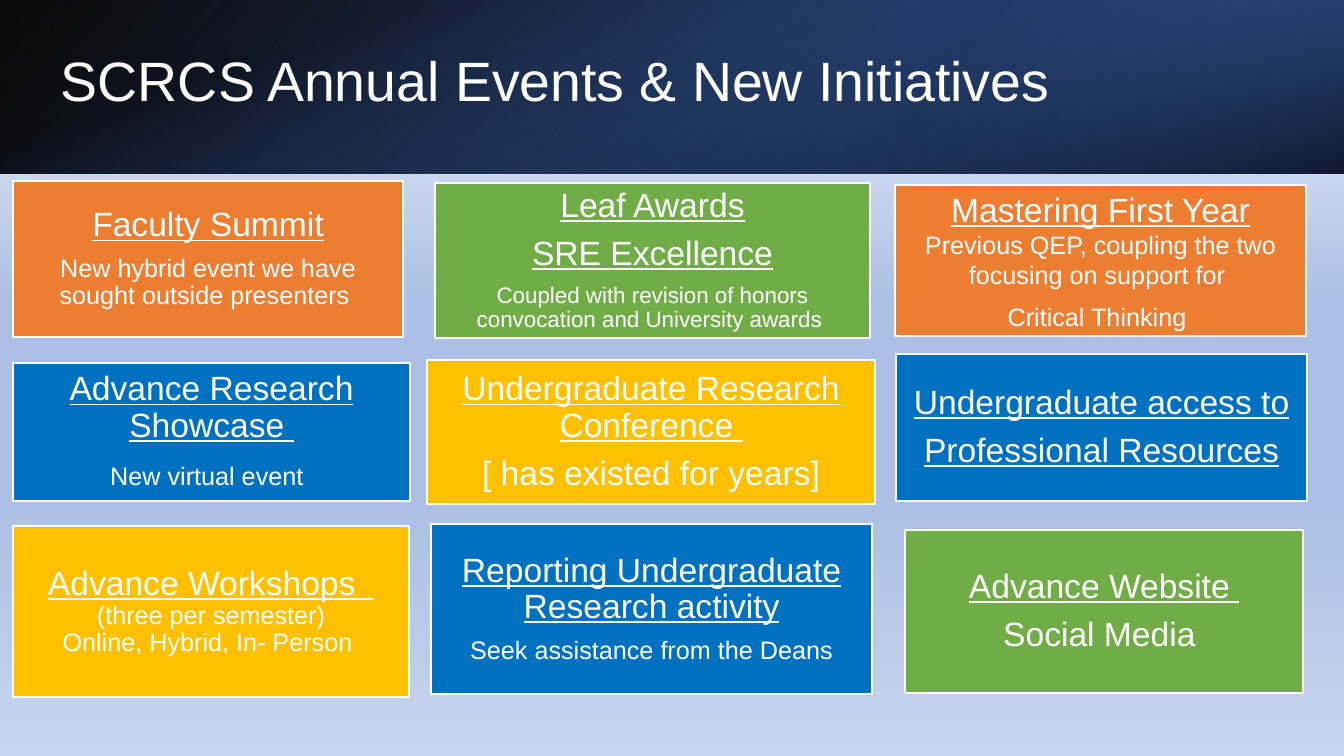
"""Builds the SCRCS annual events and new initiatives slide."""
from lxml import etree
from pptx import Presentation
from pptx.dml.color import RGBColor
from pptx.enum.shapes import MSO_SHAPE
from pptx.enum.text import MSO_ANCHOR, MSO_AUTO_SIZE, PP_ALIGN
from pptx.oxml.ns import qn
from pptx.util import Emu, Pt

RECTANGLE = MSO_SHAPE.RECTANGLE
MIDDLE = MSO_ANCHOR.MIDDLE
NO_AUTOFIT = MSO_AUTO_SIZE.NONE
LEFT, CENTER = PP_ALIGN.LEFT, PP_ALIGN.CENTER

EMU_PER_PX = 914400 / 100.8
SLIDE_W, SLIDE_H = 1344, 756
FONT = "Arial"
HEAD, BODY, SMALL = 24, 18, 16
INSET = 10
COLORS = {
    "white": "FFFFFF", "black": "000000", "orange": "ED7D31", "green": "70AD47",
    "gold": "FFC000", "blue": "0070C0", "accent": "4472C4", "navy": "203864",
    "steel": "2F5597", "mist": "F6F8FC", "sky": "ABC0E4", "haze": "C7D5ED",
}

TITLE = "SCRCS Annual Events & New Initiatives"
TITLE_BOX = (51, 42, 1293, 83)
BACKDROP = [(0, "mist", 100), (40, "sky", 100), (66, "sky", 100), (100, "haze", 100)]

# box, rotation, mirrored, gradient angle, stops of (position, color, opacity)
BAND = [
    ((0, 0, 1344, 174), 0, True, 140, [(0, "black", 96), (100, "steel", 100)]),
    ((896, 0, 448, 174), 180, True, 320, [(19, "navy", 68), (100, "accent", 79)]),
    ((585, -585, 174, 1344), 90, False, 340, [(23, "accent", 0), (99, "black", 74)]),
]

# box, color, line spacing, space after as a share of size, paragraphs of (text, size, underline)
INITIATIVES = [
    ((13, 181, 390, 156), "orange", 0.9, 0.35, [
        [("Faculty Summit", HEAD, True)],
        [("New hybrid event we have sought outside presenters ", BODY, False)]]),
    ((435, 183, 435, 155), "green", 0.9, 0.35, [
        [("Leaf Awards", HEAD, True)],
        [("SRE Excellence", HEAD, True)],
        [("Coupled with revision of honors convocation and University awards ", SMALL, False)]]),
    ((895, 185, 411, 151), "orange", 1.0, 0.35, [
        [("Mastering First Year", HEAD, True),
         (" Previous QEP, coupling the two focusing on support for ", BODY, False)],
        [("Critical Thinking ", BODY, False)]]),
    ((13, 363, 397, 138), "blue", 0.9, 0.35, [
        [("Advance Research Showcase ", HEAD, True)],
        [("New virtual event", BODY, False), (" ", HEAD, False)]]),
    ((427, 360, 448, 144), "gold", 0.9, 0.35, [
        [("Undergraduate Research Conference ", HEAD, True)],
        [("[ has existed for years]", HEAD, False)]]),
    ((896, 354, 411, 147), "blue", 0.9, 0.35, [
        [("Undergraduate access to", HEAD, True)],
        [("Professional Resources", HEAD, True)]]),
    ((13, 526, 396, 171), "gold", 0.9, 0, [
        [("Advance Workshops  ", HEAD, True)],
        [("(three per semester)", BODY, False)],
        [("Online, Hybrid, In- Person ", BODY, False)]]),
    ((431, 524, 441, 170), "blue", 0.9, 0.35, [
        [("Reporting Undergraduate Research activity", HEAD, True)],
        [("Seek assistance from the Deans", BODY, False)]]),
    ((905, 530, 398, 163), "green", 0.9, 0.35, [
        [("Advance Website ", HEAD, True)],
        [("Social Media ", HEAD, False)]]),
]


def px(length):
    return Emu(round(length * EMU_PER_PX))


def rgb(name):
    return RGBColor.from_string(COLORS[name])


def write(frame, paragraphs, align=CENTER, spacing=0.9, after=0.35, inset=INSET):
    frame.word_wrap = True
    frame.auto_size = NO_AUTOFIT
    frame.vertical_anchor = MIDDLE
    frame.margin_left = frame.margin_right = px(inset)
    frame.margin_top = frame.margin_bottom = px(inset)
    for index, runs in enumerate(paragraphs):
        paragraph = frame.add_paragraph() if index else frame.paragraphs[0]
        paragraph.alignment = align
        paragraph.line_spacing = spacing
        paragraph.space_before = Pt(0)
        paragraph.space_after = Pt(after * max(size for _, size, _ in runs))
        for text, size, underline in runs:
            run = paragraph.add_run()
            run.text = text
            run.font.name = FONT
            run.font.size = Pt(size)
            run.font.underline = underline
            run.font.color.rgb = rgb("white")


def set_gradient(parent, fill, stops, angle):
    fill.solid()
    solid = parent.find(qn("a:solidFill"))
    gradient = etree.Element(qn("a:gradFill"), rotWithShape="1")
    stop_list = etree.SubElement(gradient, qn("a:gsLst"))
    for position, color, opacity in stops:
        stop = etree.SubElement(stop_list, qn("a:gs"), pos=str(position * 1000))
        shade = etree.SubElement(stop, qn("a:srgbClr"), val=COLORS[color])
        if opacity < 100:
            etree.SubElement(shade, qn("a:alpha"), val=str(opacity * 1000))
    etree.SubElement(gradient, qn("a:lin"), ang=str(angle * 60000), scaled="0")
    parent.replace(solid, gradient)


def add_rectangle(slide, box):
    rectangle = slide.shapes.add_shape(RECTANGLE, *map(px, box))
    rectangle.shadow.inherit = False
    return rectangle


def main():
    deck = Presentation()
    deck.slide_width, deck.slide_height = px(SLIDE_W), px(SLIDE_H)
    slide = deck.slides.add_slide(deck.slide_layouts[5])

    backdrop = slide.background.fill
    backdrop.solid()
    set_gradient(slide.element.find(".//" + qn("p:bgPr")), backdrop, BACKDROP, 90)

    for box, rotation, mirrored, angle, stops in BAND:
        layer = add_rectangle(slide, box)
        layer.line.fill.background()
        layer.rotation = rotation
        properties = layer.element.spPr
        if mirrored:
            properties.find(qn("a:xfrm")).set("flipH", "1")
        set_gradient(properties, layer.fill, stops, angle)

    title = slide.shapes.title
    title.left, title.top, title.width, title.height = map(px, TITLE_BOX)
    write(title.text_frame, [[(TITLE, 39.6, False)]], align=LEFT, after=0)
    slide.shapes.element.append(title.element)

    for box, color, spacing, after, paragraphs in INITIATIVES:
        card = add_rectangle(slide, box)
        card.fill.solid()
        card.fill.fore_color.rgb = rgb(color)
        card.line.color.rgb = rgb("white")
        card.line.width = Pt(1)
        write(card.text_frame, paragraphs, spacing=spacing, after=after)

    deck.save("out.pptx")


if __name__ == "__main__":
    main()
